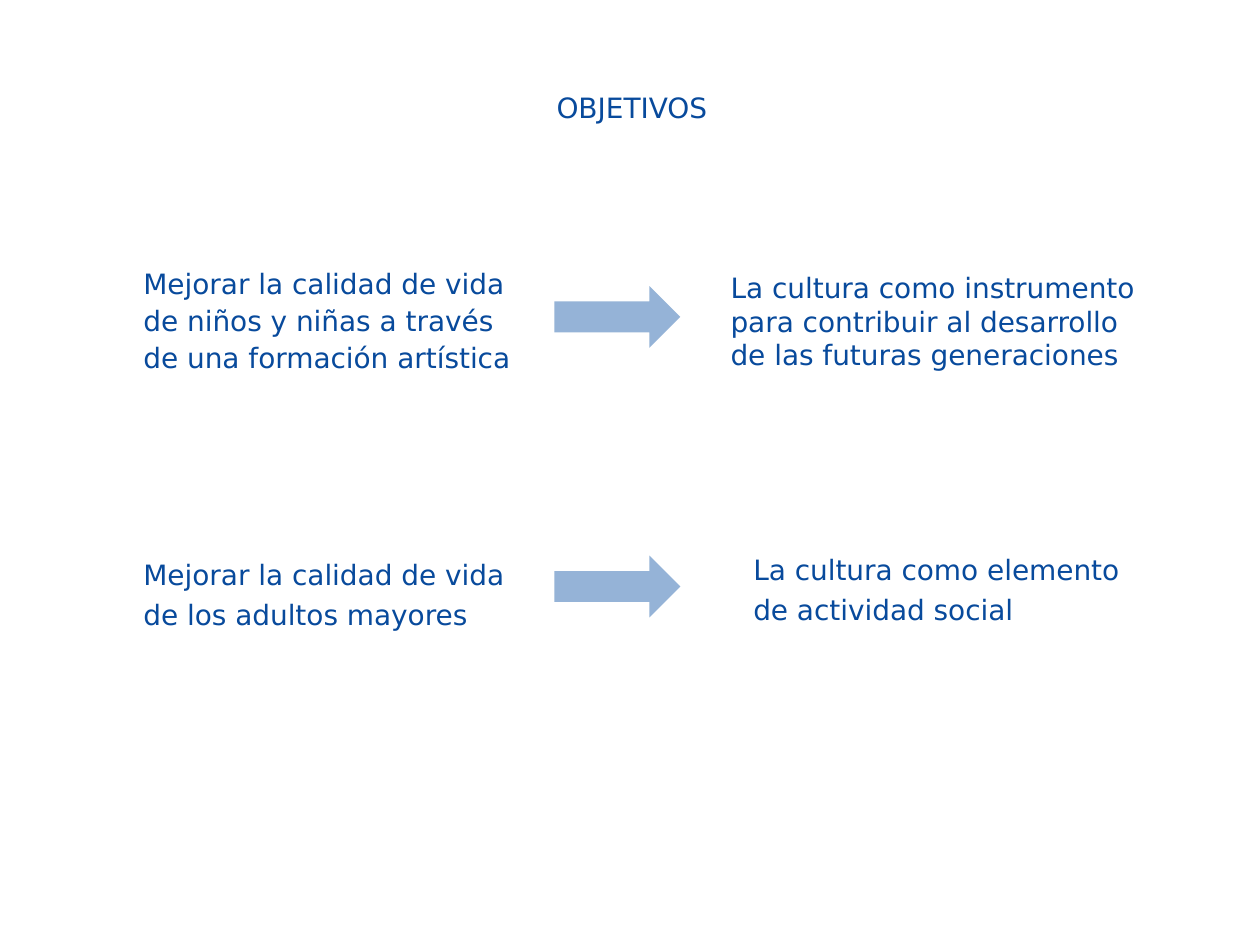
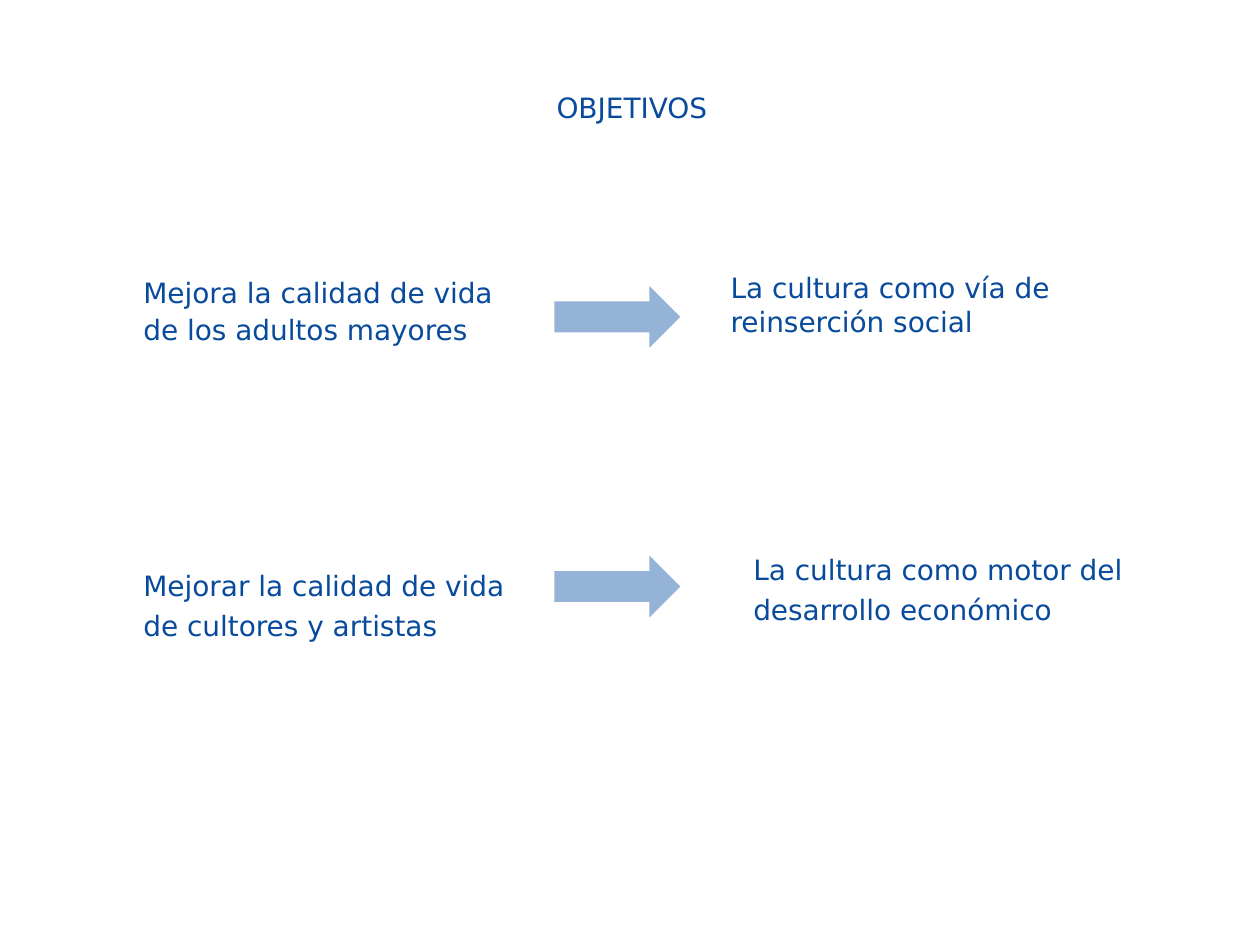
from pptx import Presentation
from pptx.dml.color import RGBColor
from pptx.enum.shapes import MSO_SHAPE as Shape
from pptx.enum.text import MSO_AUTO_SIZE as AutoSize, PP_ALIGN as Align
from pptx.util import Inches, Pt

TEXT_BLUE = RGBColor(0x08, 0x4A, 0x9C)
ARROW_BLUE = RGBColor(0x95, 0xB3, 0xD7)
FONT = "DejaVu Sans"
ARROW_TOPS = (2.27, 4.41)

# Each text is (left, top, width, height), line spacing, wording
SLIDES = [
    [
        ((1.04, 2.04, 3.27, 0.99), 1.1,
         "Mejorar la calidad de vida de niños y niñas a través de una formación artística"),
        ((5.7, 2.1, 3.43, 0.91), 1.0,
         "La cultura como instrumento para contribuir al desarrollo de las futuras generaciones"),
        ((1.04, 4.32, 3.14, 0.74), 1.2,
         "Mejorar la calidad de vida\vde los adultos mayores"),
        ((5.88, 4.28, 3.29, 0.74), 1.2,
         "La cultura como elemento de actividad social"),
    ],
    [
        ((1.04, 2.11, 3.27, 0.69), 1.1,
         "Mejora la calidad de vida\vde los adultos mayores"),
        ((5.7, 2.1, 3.43, 0.64), 1.0,
         "La cultura como vía de reinserción social"),
        ((1.04, 4.41, 3.14, 0.74), 1.2,
         "Mejorar la calidad de vida\nde cultores y artistas"),
        ((5.88, 4.28, 3.29, 0.74), 1.2,
         "La cultura como motor del desarrollo económico"),
    ],
]


def add_text(page, place, text, spacing=1.0, align=Align.LEFT):
    box = page.shapes.add_textbox(*map(Inches, place))
    frame = box.text_frame
    frame.word_wrap = True
    frame.auto_size = AutoSize.SHAPE_TO_FIT_TEXT
    frame.text = text
    for para in frame.paragraphs:
        para.alignment = align
        para.line_spacing = spacing
        for span in para.runs:
            span.font.name = FONT
            span.font.size = Pt(16)
            span.font.color.rgb = TEXT_BLUE


def add_title(page):
    add_text(page, (3.56, 0.67, 2.91, 0.37), "OBJETIVOS", align=Align.CENTER)


def add_arrow(page, top):
    arrow = page.shapes.add_shape(
        Shape.RIGHT_ARROW, Inches(4.4), Inches(top), Inches(1), Inches(0.49))
    arrow.shadow.inherit = False
    arrow.fill.solid()
    arrow.fill.fore_color.rgb = ARROW_BLUE
    arrow.line.fill.background()


def main():
    deck = Presentation()
    deck.slide_width, deck.slide_height = Inches(10), Inches(7.5)
    blank = deck.slide_layouts[6]
    for goals in SLIDES:
        page = deck.slides.add_slide(blank)
        add_title(page)
        for place, spacing, text in goals:
            add_text(page, place, text, spacing)
        for top in ARROW_TOPS:
            add_arrow(page, top)
    deck.save("out.pptx")


if __name__ == "__main__":
    main()
